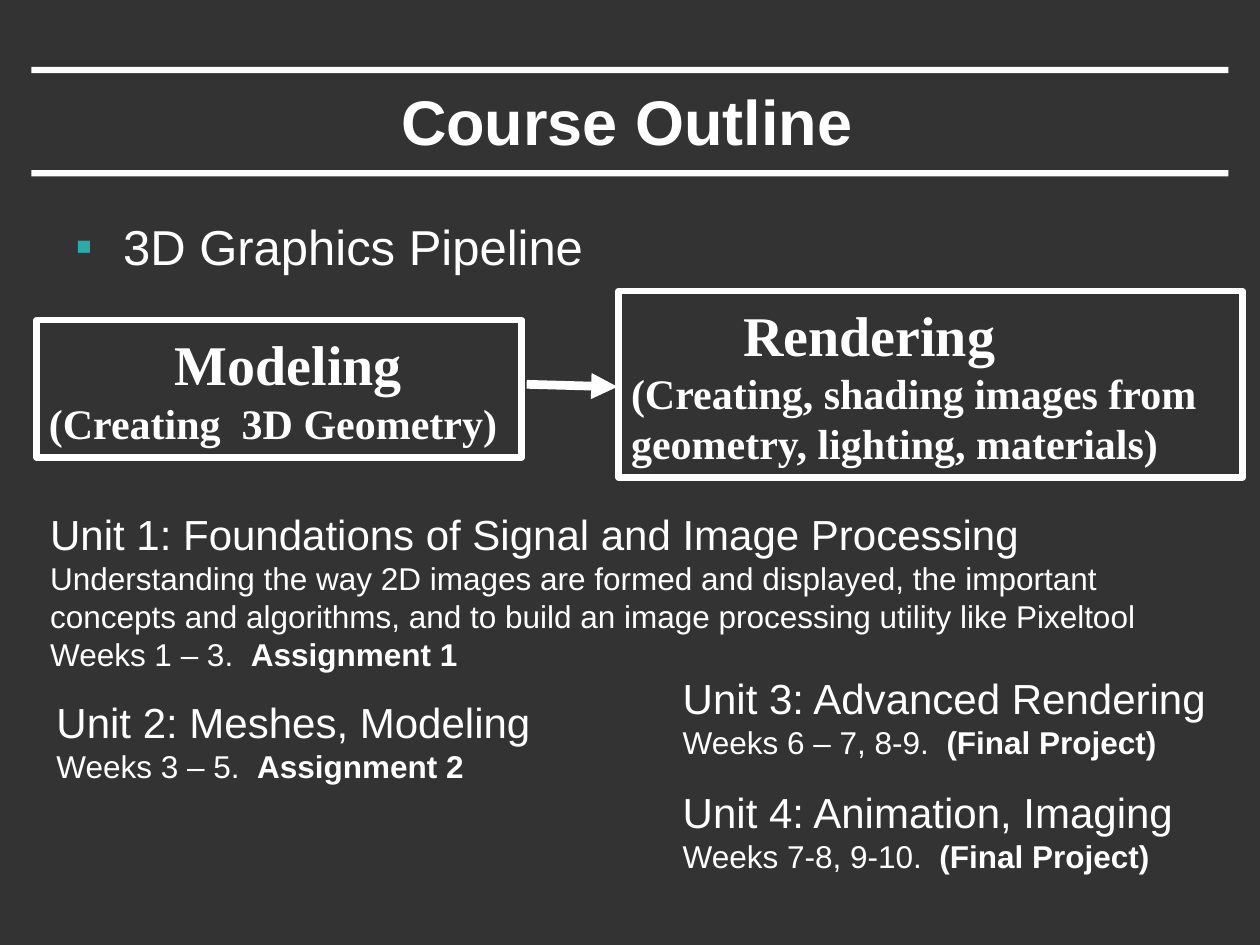
from lxml.etree import SubElement
from pptx import Presentation
from pptx.dml.color import RGBColor as RGB
from pptx.enum.shapes import MSO_CONNECTOR as LINK, MSO_SHAPE as SHAPE
from pptx.enum.text import MSO_ANCHOR as ANCHOR, PP_ALIGN as ALIGN
from pptx.oxml.ns import qn
from pptx.util import Inches, Pt

# Content: a paragraph is a list of (text, bold) runs
TITLE = "Course Outline"
TOPIC = "3D Graphics Pipeline"
STAGES = [  # heading, detail, heading indent, box
    ("Modeling", "(Creating  3D Geometry)", 1.0, (0.29, 2.54, 3.85, 1.09)),
    ("Rendering", "(Creating, shading images from geometry, lighting, materials)",
     0.89, (4.91, 2.31, 4.95, 1.48)),
]
UNITS = [  # heading, summary, weeks, task, box
    ("Unit 1: Foundations of Signal and Image Processing",
     "Understanding the way 2D images are formed and displayed, the important "
     "concepts and algorithms, and to build an image processing utility like Pixeltool",
     "Weeks 1 – 3.  ", "Assignment 1", (0.3, 3.99, 9.47, 1.72)),
    ("Unit 2: Meshes, Modeling", None,
     "Weeks 3 – 5.  ", "Assignment 2", (0.35, 5.48, 4.06, 1.1)),
    ("Unit 3: Advanced Rendering", None,
     "Weeks 6 – 7, 8-9.  ", "(Final Project)", (5.32, 5.29, 4.51, 1.11)),
    ("Unit 4: Animation, Imaging", None,
     "Weeks 7-8, 9-10.  ", "(Final Project)", (5.32, 6.19, 4.55, 1.11)),
]
THEME = dict(back=RGB(0x33, 0x33, 0x33), ink=RGB(255, 255, 255), mark="2AABA8",
             sans="Arial", serif="Times New Roman",
             title=36, stage=32, topic=28, head=24, body=18)

deck = Presentation()
deck.slide_width, deck.slide_height = Inches(10), Inches(7.5)
slide = deck.slides.add_slide(deck.slide_layouts[6])
slide.background.fill.solid()
slide.background.fill.fore_color.rgb = THEME["back"]
shapes = slide.shapes


def inch(box):
    return [Inches(v) for v in box]


def write(frame, runs, size, font="sans", align=ALIGN.LEFT, left=0, hang=0, bullet=None):
    """Add one paragraph, using the empty first one if it is free."""
    para = frame.paragraphs[0]
    if para.runs:
        para = frame.add_paragraph()
    para.alignment = align
    props = para._p.get_or_add_pPr()
    props.set("marL", str(Inches(left)))
    props.set("indent", str(Inches(-hang)))
    if bullet:
        color = SubElement(props, qn("a:buClr"))
        SubElement(color, qn("a:srgbClr"), val=THEME["mark"])
        SubElement(props, qn("a:buFont"), typeface=THEME["sans"])
        SubElement(props, qn("a:buChar"), char=bullet)
    for text, bold in runs:
        run = para.add_run()
        run.text = text
        run.font.name, run.font.size = THEME[font], Pt(THEME[size])
        run.font.bold, run.font.color.rgb = bold, THEME["ink"]


def frame_at(box, anchor=ANCHOR.TOP):
    frame = shapes.add_textbox(*inch(box)).text_frame
    frame.word_wrap, frame.vertical_anchor = True, anchor
    return frame


def rect(box):
    shape = shapes.add_shape(SHAPE.RECTANGLE, *inch(box))
    shape.shadow.inherit = False
    return shape


# Title between two rules
for top in (1.35, 0.53):
    rule = rect((0.25, top, 9.5, 0.05))
    rule.fill.solid()
    rule.fill.fore_color.rgb = THEME["ink"]
    rule.line.fill.background()
write(frame_at((0.74, 0.58, 8.47, 0.75), ANCHOR.MIDDLE), [(TITLE, True)],
      "title", align=ALIGN.CENTER)

# Topic
write(frame_at((0.5, 1.67, 9, 0.6)), [(TOPIC, False)], "topic",
      left=0.38, hang=0.38, bullet="▪")

# Arrow from stage to stage
arrow = shapes.add_connector(LINK.STRAIGHT, *inch((4.18, 3.05, 4.9, 3.07)))
arrow.line.color.rgb, arrow.line.width = THEME["ink"], Pt(5)
SubElement(arrow.line._get_or_add_ln(), qn("a:tailEnd"), type="triangle")
SubElement(arrow._element.spPr, qn("a:effectLst"))

# Pipeline stages
for head, detail, left, box in STAGES:
    stage = rect(box)
    stage.fill.background()
    stage.line.color.rgb, stage.line.width = THEME["ink"], Pt(3.75)
    frame = stage.text_frame
    frame.word_wrap, frame.vertical_anchor = True, ANCHOR.MIDDLE
    write(frame, [(head, True)], "stage", font="serif", left=left)
    write(frame, [(detail, True)], "head", font="serif")

# Course units
for head, about, weeks, task, box in UNITS:
    frame = frame_at(box)
    write(frame, [(head, False)], "head")
    if about:
        write(frame, [(about, False)], "body")
    write(frame, [(weeks, False), (task, True)], "body")

deck.save("out.pptx")
